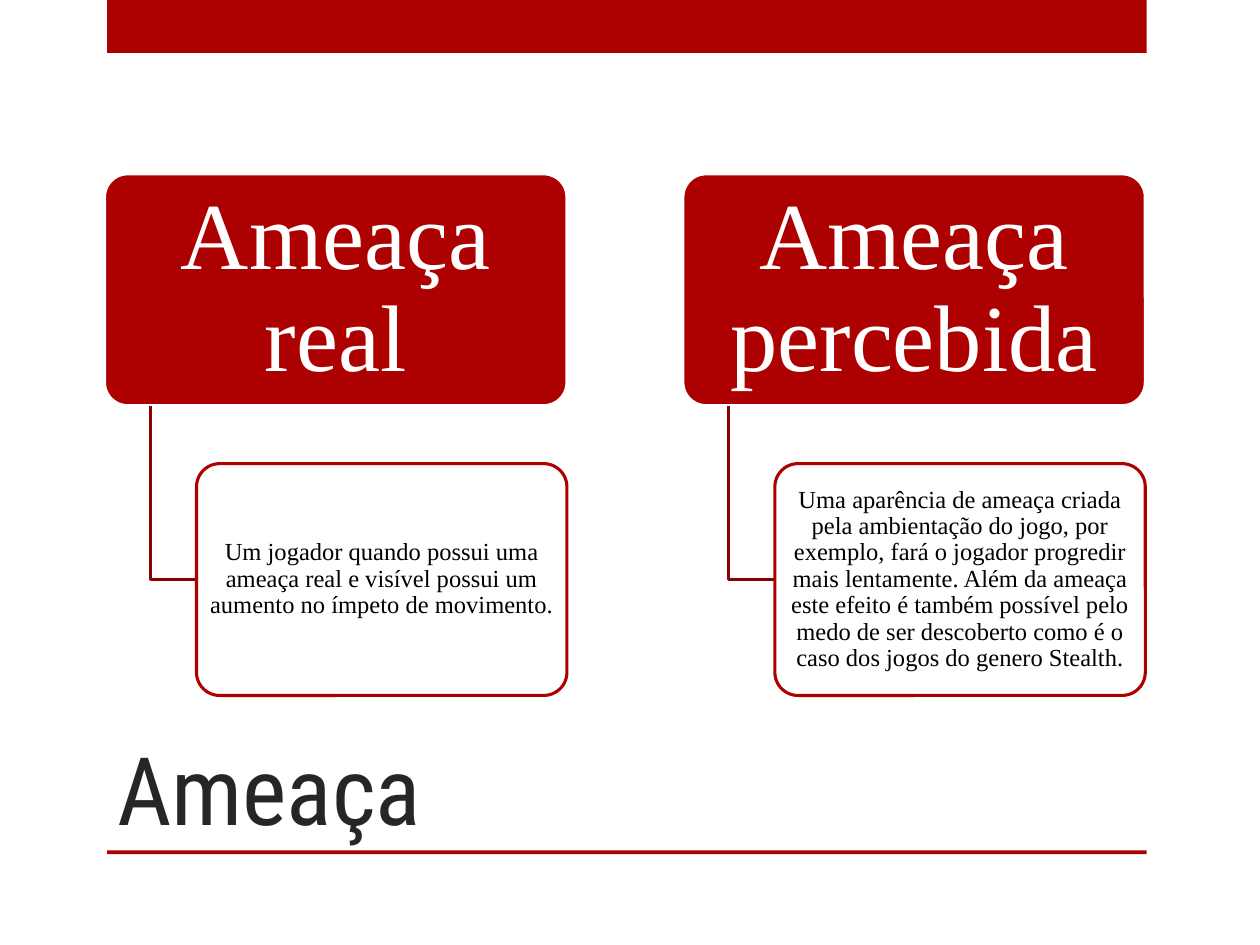
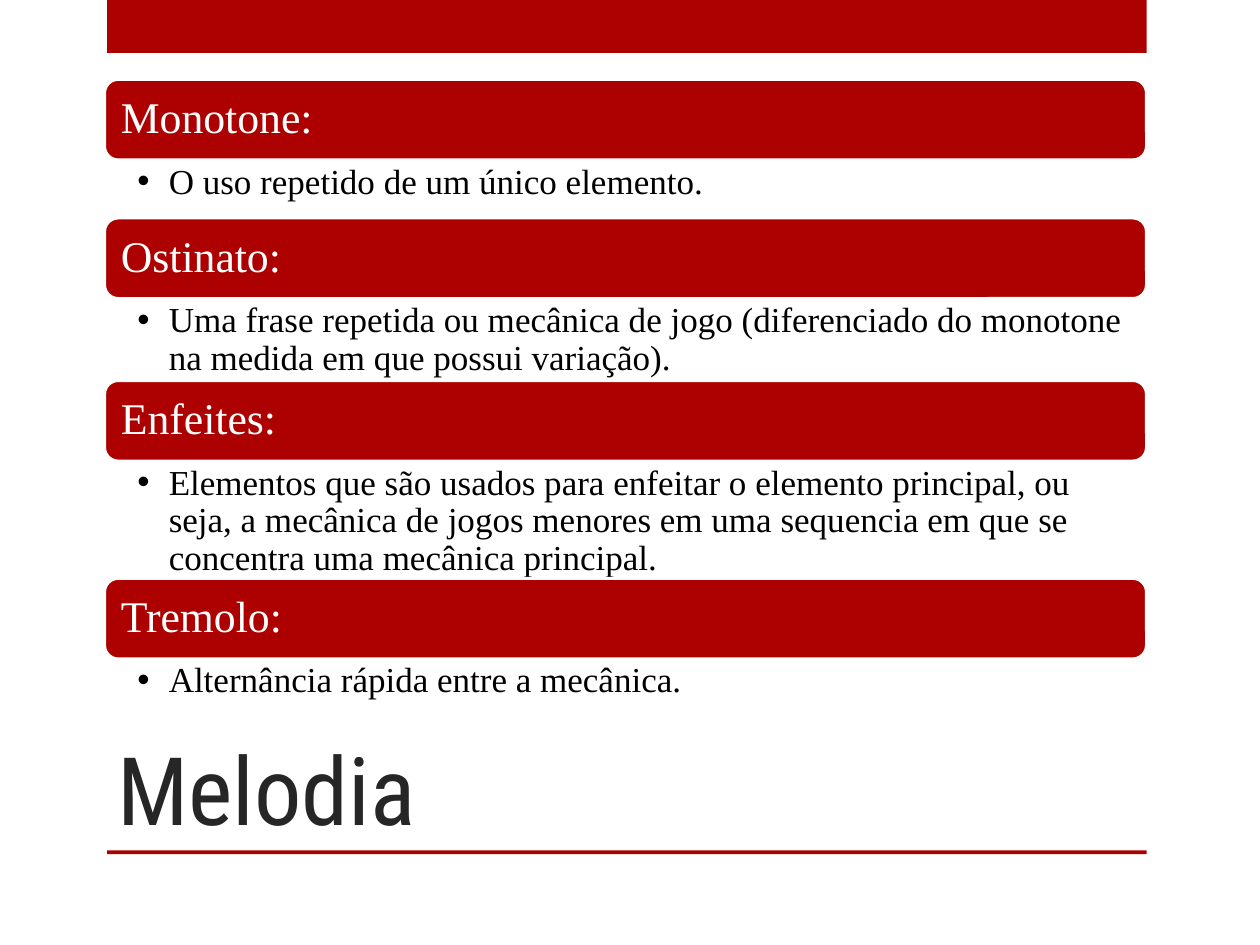
from lxml import etree
from pptx import Presentation
from pptx.dml.color import RGBColor
from pptx.enum import shapes, text
from pptx.oxml import ns
from pptx.util import Emu, Inches, Pt

COLORS = {
    "red": "AD0101",
    "dark_red": "8B0101",
    "title": "262626",
    "white": "FFFFFF",
    "black": "000000",
}
TITLE_FONT = "Roboto Condensed"
BODY_FONT = "Times New Roman"
LEFT, WIDTH = 0.83, 8.27
LINE_WIDTH = Pt(1.75)

THREATS = [
    ("Ameaça real",
     "Um jogador quando possui uma ameaça real e visível possui um "
     "aumento no ímpeto de movimento."),
    ("Ameaça percebida",
     "Uma aparência de ameaça criada pela ambientação do jogo, por exemplo, "
     "fará o jogador progredir mais lentamente. Além da ameaça este efeito é "
     "também possível pelo medo de ser descoberto como é o caso dos jogos do "
     "genero Stealth."),
]

# Term, explanation, height of the explanation
MELODY_TERMS = [
    ("Monotone:", "O uso repetido de um único elemento.", 0.46),
    ("Ostinato:",
     "Uma frase repetida ou mecânica de jogo (diferenciado "
     "do monotone na medida em que possui variação).", 0.65),
    ("Enfeites:",
     "Elementos que são usados para enfeitar o elemento principal, ou "
     "seja, a mecânica de jogos menores em uma sequencia em que se "
     "concentra uma mecânica principal.", 0.93),
    ("Tremolo:", "Alternância rápida entre a mecânica.", 0.46),
]


def rgb(name):
    return RGBColor.from_string(COLORS[name])


def box(values):
    return [Inches(value) for value in values]


def write(frame, words, size, color, font=BODY_FONT, align=text.PP_ALIGN.LEFT,
          anchor=text.MSO_ANCHOR.MIDDLE, insets=(0.1, 0.05, 0.1, 0.05), spacing=0.9):
    """Fill a text frame with one formatted paragraph and return the paragraph."""
    frame.text = words
    frame.word_wrap = True
    frame.auto_size = text.MSO_AUTO_SIZE.NONE
    frame.vertical_anchor = anchor
    (frame.margin_left, frame.margin_top,
     frame.margin_right, frame.margin_bottom) = box(insets)
    paragraph = frame.paragraphs[0]
    paragraph.alignment = align
    paragraph.line_spacing = spacing
    for run in paragraph.runs:
        run.font.name = font
        run.font.size = Pt(size)
        run.font.color.rgb = rgb(color)
    return paragraph


def add_panel(slide, at, fill, line=None, rounding=None):
    """Add a plain rectangle, or a rounded one when a rounding is given."""
    kind = shapes.MSO_SHAPE.ROUNDED_RECTANGLE if rounding else shapes.MSO_SHAPE.RECTANGLE
    panel = slide.shapes.add_shape(kind, *box(at))
    panel.shadow.inherit = False
    panel.fill.solid()
    panel.fill.fore_color.rgb = rgb(fill)
    if rounding:
        panel.adjustments[0] = rounding
    if line:
        panel.line.color.rgb = rgb(line)
        panel.line.width = LINE_WIDTH
    else:
        panel.line.fill.background()
    return panel


def add_elbow(slide, left, top, width, height):
    """Draw a line that goes down and then right."""
    x, y, right, bottom = box((left, top, left + width, top + height))
    builder = slide.shapes.build_freeform(x, y)
    builder.add_line_segments([(x, bottom), (right, bottom)], close=False)
    elbow = builder.convert_to_shape()
    elbow.shadow.inherit = False
    elbow.fill.background()
    elbow.line.color.rgb = rgb("dark_red")
    elbow.line.width = LINE_WIDTH


def add_bullet(paragraph, indent):
    properties = paragraph._p.get_or_add_pPr()
    properties.set("marL", str(Inches(indent)))
    properties.set("indent", str(Emu(-Inches(indent))))
    etree.SubElement(properties, ns.qn("a:buFont")).set("typeface", "Arial")
    etree.SubElement(properties, ns.qn("a:buChar")).set("char", "•")


def style_layout(layout, slide):
    """Place the title and move the two bands, drawn on a slide, to its layout."""
    title = layout.placeholders[0]
    title.left, title.top, title.width, title.height = box((LEFT, 5, 7.42, 1.75))
    for top, height in ((0, 0.42), (6.75, 0.03)):
        band = add_panel(slide, (0.85, top, 8.25, height), "red")
        layout.shapes.element.append(band.element)


def add_titled_slide(deck, layout, title):
    slide = deck.slides.add_slide(layout)
    write(slide.shapes.title.text_frame, title, 54, "title", TITLE_FONT,
          anchor=text.MSO_ANCHOR.BOTTOM, spacing=1.0)
    return slide


def add_threat(slide, left, name, explanation):
    top, head_width, height, step = 1.38, 3.67, 1.84, 0.73
    detail_top = top + 1.25 * height
    head = add_panel(slide, (left, top, head_width, height), "red", "white", 0.1)
    write(head.text_frame, name, 54, "white", align=text.PP_ALIGN.CENTER,
          insets=(0.11, 0.07, 0.11, 0.07))
    add_elbow(slide, left + step / 2, top + height, step / 2, 0.75 * height)
    detail = add_panel(slide, (left + step, detail_top, head_width - step, height),
                       "white", "red", 0.1)
    write(detail.text_frame, explanation, 14, "black", align=text.PP_ALIGN.CENTER,
          insets=(0.03, 0.02, 0.03, 0.02))


def add_term(slide, top, term, explanation, height):
    """Add a term bar with its bullet below and return the bottom edge."""
    bar_height = 0.64
    bar = add_panel(slide, (LEFT, top, WIDTH, bar_height), "red", "white", 0.17)
    write(bar.text_frame, term, 25, "white", insets=(0.1, 0.1, 0.1, 0.1))
    top += bar_height
    note = slide.shapes.add_textbox(*box((LEFT, top, WIDTH, height)))
    bullet = write(note.text_frame, explanation, 20, "black",
                   anchor=text.MSO_ANCHOR.TOP, insets=(0.26, 0.03, 0.19, 0.03))
    add_bullet(bullet, 0.25)
    return top + height


def main():
    deck = Presentation()
    deck.slide_width, deck.slide_height = Inches(10), Inches(7.5)
    layout = deck.slide_layouts.get_by_name("Title Only")

    threat_slide = add_titled_slide(deck, layout, "Ameaça")
    style_layout(layout, threat_slide)
    for column, threat in enumerate(THREATS):
        add_threat(threat_slide, LEFT + 4.59 * column, *threat)

    melody_slide = add_titled_slide(deck, layout, "Melodia")
    top = 0.63
    for term in MELODY_TERMS:
        top = add_term(melody_slide, top, *term)

    deck.save("out.pptx")


if __name__ == "__main__":
    main()
